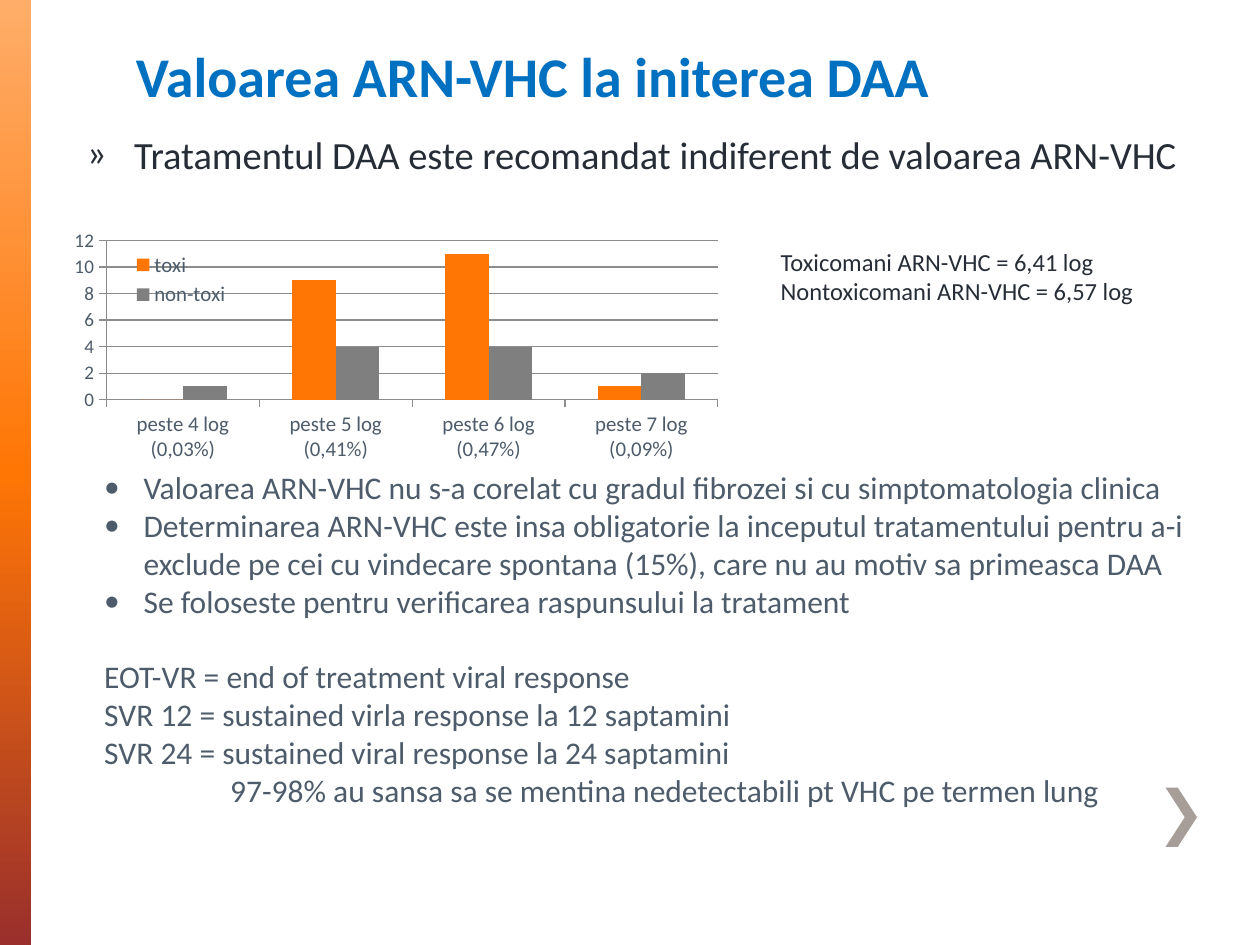
"""Build the slide on HCV RNA level at the start of DAA treatment."""
from lxml import etree
from pptx import Presentation
from pptx import util as u
from pptx.chart.data import CategoryChartData
from pptx.dml.color import RGBColor
from pptx.enum import chart as ch, shapes, text
from pptx.oxml import parse_xml
from pptx.oxml.ns import nsdecls, qn

Pt = u.Pt
FONT = "Calibri"
INK, SLATE, BLUE, GRID = "262D36", "4D5B6B", "0070C0", "8C8C8C"

TITLE = "Valoarea ARN-VHC la initerea DAA"
LEAD = "Tratamentul DAA este recomandat indiferent de valoarea ARN-VHC"
MEANS = ["Toxicomani ARN-VHC = 6,41 log", "Nontoxicomani ARN-VHC = 6,57 log"]
FINDINGS = [
    "Valoarea ARN-VHC nu s-a corelat cu gradul fibrozei si cu simptomatologia clinica",
    "Determinarea ARN-VHC este insa obligatorie la inceputul tratamentului pentru a-i "
    "exclude pe cei cu vindecare spontana (15%), care nu au motiv sa primeasca DAA",
    "Se foloseste pentru verificarea raspunsului la tratament",
]
TERMS = [
    "EOT-VR = end of treatment viral response",
    "SVR 12 = sustained virla response la 12 saptamini",
    "SVR 24 = sustained viral response la 24 saptamini",
]
OUTCOME = "97-98% au sansa sa se mentina nedetectabili pt VHC pe termen lung"
LEVELS = ["peste 4 log (0,03%)", "peste 5 log (0,41%)",
          "peste 6 log (0,47%)", "peste 7 log (0,09%)"]
GROUPS = [("toxi", (0, 9, 11, 1), "FF7605"), ("non-toxi", (1, 4, 4, 2), "7F7F7F")]
BAND_STOPS = [(0, "FFAD69"), (50, "FF7605"), (100, "9A2F2C")]
CHEVRON = [(673, 450), (665.5, 450), (677, 467), (665.5, 484), (673, 484), (684.5, 467)]


def color(hex_code):
    return RGBColor.from_string(hex_code)


def style(font, size, hex_code, bold=False):
    font.name, font.size, font.bold = FONT, Pt(size), bold
    font.color.rgb = color(hex_code)


def write(frame, lines, size, hex_code, bold=False):
    frame.word_wrap = True
    frame.text = "\n".join(lines)
    for paragraph in frame.paragraphs:
        for run in paragraph.runs:
            style(run.font, size, hex_code, bold)
    return frame.paragraphs


def place(shape, left, top, width, height):
    shape.left, shape.top, shape.width, shape.height = map(Pt, (left, top, width, height))


def indent(paragraph, left, bullet=None):
    props = paragraph._p.get_or_add_pPr()
    props.set("marL", str(Pt(left)))
    props.set("indent", str(-Pt(left) if bullet else 0))
    if bullet:
        etree.SubElement(props, qn("a:buFont")).set("typeface", FONT)
        etree.SubElement(props, qn("a:buChar")).set("char", bullet)


def lay_out(part, x, y, w, h, inner=False):
    target = '<c:layoutTarget val="inner"/>' if inner else ""
    values = "".join(f'<c:{key} val="{value}"/>' for key, value in zip("xywh", (x, y, w, h)))
    layout = parse_xml(
        f'<c:layout {nsdecls("c")}><c:manualLayout>{target}<c:xMode val="edge"/>'
        f'<c:yMode val="edge"/>{values}</c:manualLayout></c:layout>')
    for old in part.findall(qn("c:layout")):
        part.remove(old)
    before = part.find(qn("c:legendPos"))
    part.insert(0 if before is None else part.index(before) + 1, layout)


def add_decor(slide):
    band = slide.shapes.add_shape(shapes.MSO_SHAPE.RECTANGLE, 0, 0, Pt(18), Pt(540))
    band.fill.gradient()
    band.fill.gradient_angle = 270
    stops = band._element.spPr.find(".//" + qn("a:gsLst"))
    for stop in list(stops):
        stops.remove(stop)
    for position, hex_code in BAND_STOPS:
        stop = etree.SubElement(stops, qn("a:gs"), pos=str(position * 1000))
        etree.SubElement(stop, qn("a:srgbClr"), val=hex_code)
    builder = slide.shapes.build_freeform(*CHEVRON[0], scale=Pt(1))
    builder.add_line_segments(CHEVRON[1:], close=True)
    chevron = builder.convert_to_shape()
    chevron.fill.solid()
    chevron.fill.fore_color.rgb = color("A79D99")
    for shape in (band, chevron):
        shape.line.fill.background()
        shape.shadow.inherit = False


def add_viral_load_chart(slide):
    data = CategoryChartData()
    data.categories = LEVELS
    for name, counts, _ in GROUPS:
        data.add_series(name, counts)
    chart = slide.shapes.add_chart(ch.XL_CHART_TYPE.COLUMN_CLUSTERED,
                                   Pt(42.5), Pt(128), Pt(391), Pt(136), data).chart
    style(chart.font, 18, SLATE)
    chart.has_title = False
    plot = chart.plots[0]
    plot.gap_width, plot.overlap, plot.vary_by_categories = 150, 0, False
    for series, (_, _, hex_code) in zip(plot.series, GROUPS):
        series.format.fill.solid()
        series.format.fill.fore_color.rgb = color(hex_code)
    counts_axis = chart.value_axis
    counts_axis.minimum_scale, counts_axis.maximum_scale, counts_axis.major_unit = 0, 12, 2
    counts_axis.has_major_gridlines = True
    for axis, size in ((chart.category_axis, 12), (counts_axis, 11)):
        axis.major_tick_mark = ch.XL_TICK_MARK.OUTSIDE
        style(axis.tick_labels.font, size, SLATE)
    for rule in (chart.category_axis, counts_axis, counts_axis.major_gridlines):
        rule.format.line.color.rgb = color(GRID)
        rule.format.line.width = Pt(0.75)
    chart.has_legend = True
    chart.legend.position = ch.XL_LEGEND_POSITION.RIGHT
    chart.legend.include_in_layout = False
    style(chart.legend.font, 12, SLATE)
    lay_out(chart.legend._element, 0.07, 0.1, 0.16, 0.27)
    lay_out(plot._element.getparent(), 0.04, 0.07, 0.9, 0.67, inner=True)


def main():
    deck = Presentation()
    deck.slide_width, deck.slide_height = Pt(720), Pt(540)
    slide = deck.slides.add_slide(deck.slide_layouts[1])
    add_decor(slide)

    title, lead = slide.placeholders
    place(title, 70.5, 15, 592.5, 51)
    title.text_frame.vertical_anchor = text.MSO_ANCHOR.BOTTOM
    write(title.text_frame, [TITLE], 32, BLUE, bold=True)[0].alignment = text.PP_ALIGN.LEFT
    place(lead, 42.5, 71, 657.5, 108)
    indent(write(lead.text_frame, [LEAD], 22, INK)[0], 27, "»")

    add_viral_load_chart(slide)

    means = slide.shapes.add_textbox(Pt(439), Pt(137.5), Pt(260.5), Pt(41))
    write(means.text_frame, MEANS, 14, INK)
    notes = slide.shapes.add_textbox(Pt(52.5), Pt(264), Pt(654), Pt(225.5))
    paragraphs = write(notes.text_frame, FINDINGS + TERMS + [OUTCOME], 18, SLATE)
    for finding in paragraphs[:len(FINDINGS)]:
        indent(finding, 22.5, "•")
    paragraphs[len(FINDINGS)].space_before = Pt(21.6)
    indent(paragraphs[-1], 72)
    deck.save("out.pptx")


if __name__ == "__main__":
    main()
